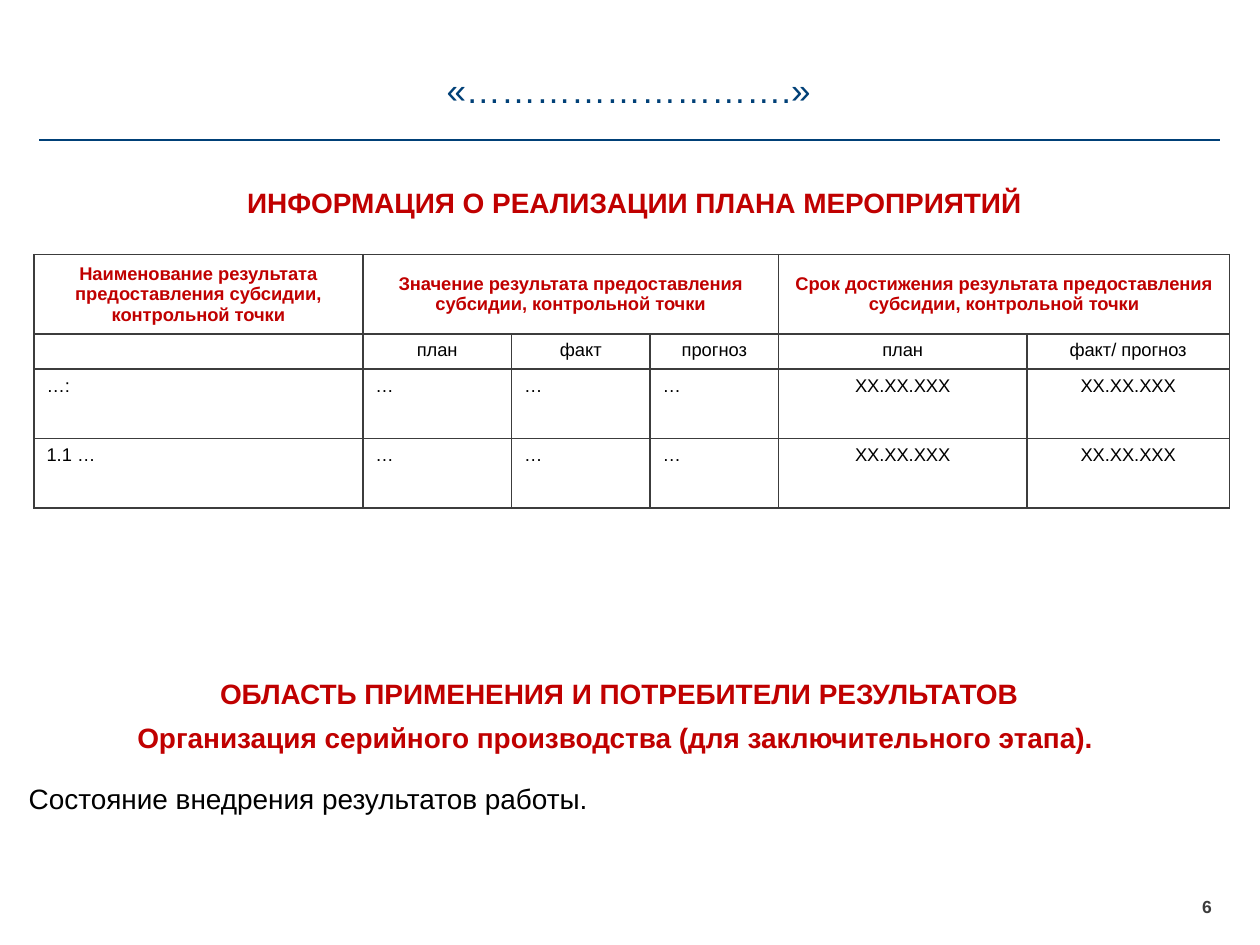
from lxml.etree import SubElement
from pptx import Presentation
from pptx.dml.color import RGBColor
from pptx.enum.shapes import MSO_CONNECTOR
from pptx.enum.text import MSO_ANCHOR as Anchor, PP_ALIGN as Align
from pptx.oxml.ns import qn
from pptx.util import Inches, Pt

COLORS = {"navy": "004077", "red": "C00000", "gray": "3C3C3C", "black": "000000"}
FONT = "Arial"

COLUMN_WIDTHS = [2.61, 1.18, 1.1, 1.02, 1.97, 1.61]
ROW_HEIGHTS = [0.63, 0.28, 0.55, 0.55]
# Heading, first column, last column
HEADINGS = [
    ("Наименование результата предоставления субсидии, контрольной точки", 0, 0),
    ("Значение результата предоставления субсидии, контрольной точки", 1, 3),
    ("Срок достижения результата предоставления субсидии, контрольной точки", 4, 5),
]
BODY_ROWS = [
    ["", "план", "факт", "прогноз", "план", "факт/ прогноз"],
    ["…:", "…", "…", "…", "XX.XX.XXX", "XX.XX.XXX"],
    ["1.1 …", "…", "…", "…", "XX.XX.XXX", "XX.XX.XXX"],
]


def color(name):
    return RGBColor.from_string(COLORS[name])


def format_paragraph(paragraph, size, color_name, bold=False, align=Align.LEFT):
    paragraph.alignment = align
    paragraph.font.name = FONT
    paragraph.font.size = Pt(size)
    paragraph.font.bold = bold
    paragraph.font.color.rgb = color(color_name)


def set_margins(frame, side, vertical):
    frame.margin_left = frame.margin_right = Inches(side)
    frame.margin_top = frame.margin_bottom = Inches(vertical)


def add_text(slide, box, lines, size, color_name, bold=False, align=Align.CENTER,
             side=0, vertical=0.05):
    frame = slide.shapes.add_textbox(*map(Inches, box)).text_frame
    frame.word_wrap = True
    set_margins(frame, side, vertical)
    frame.text = "\n".join(lines)
    for index, paragraph in enumerate(frame.paragraphs):
        format_paragraph(paragraph, size, color_name, bold, align)
        if index:
            paragraph.space_before = Pt(6)


def add_title(slide, box, text):
    title = slide.shapes.title
    title.left, title.top, title.width, title.height = map(Inches, box)
    frame = title.text_frame
    frame.text = text
    frame.vertical_anchor = Anchor.BOTTOM
    set_margins(frame, 0, 0)
    format_paragraph(frame.paragraphs[0], 20, "navy", align=Align.CENTER)


def add_rule(slide, left, right, y):
    rule = slide.shapes.add_connector(
        MSO_CONNECTOR.STRAIGHT, Inches(left), Inches(y), Inches(right), Inches(y))
    rule.line.color.rgb = color("navy")
    rule.line.width = Pt(1)
    SubElement(rule._element.spPr, qn("a:effectLst"))


def set_borders(cell):
    properties = cell._tc.get_or_add_tcPr()
    for side in ("a:lnL", "a:lnR", "a:lnT", "a:lnB"):
        line = SubElement(properties, qn(side), w=str(Pt(1)))
        fill = SubElement(line, qn("a:solidFill"))
        SubElement(fill, qn("a:srgbClr"), val=COLORS["gray"])


def fill_cell(cell, text, color_name="black", bold=False, align=Align.LEFT):
    cell.text = text
    paragraph = cell.text_frame.paragraphs[0]
    format_paragraph(paragraph, 10.5, color_name, bold, align)
    if not text:
        # Keeps the empty cell from growing to the default text size
        SubElement(paragraph._p, qn("a:endParaRPr"), sz="1050")


def add_results_table(slide, box):
    table = slide.shapes.add_table(
        len(ROW_HEIGHTS), len(COLUMN_WIDTHS), *map(Inches, box)).table
    table.first_row = table.horz_banding = False
    for column, width in zip(table.columns, COLUMN_WIDTHS):
        column.width = Inches(width)
    for row, height in zip(table.rows, ROW_HEIGHTS):
        row.height = Inches(height)
    for cell in table.iter_cells():
        set_borders(cell)
        cell.fill.background()

    # Heading row
    for text, first, last in HEADINGS:
        cell = table.cell(0, first)
        if last > first:
            cell.merge(table.cell(0, last))
        cell.vertical_anchor = Anchor.MIDDLE
        fill_cell(cell, text, "red", True, Align.CENTER)

    # Subheadings and dates are centred, other values start at the left
    for row, values in enumerate(BODY_ROWS, start=1):
        for column, text in enumerate(values):
            centered = row == 1 or column >= 4
            fill_cell(table.cell(row, column), text,
                      align=Align.CENTER if centered else Align.LEFT)


def main():
    presentation = Presentation()
    presentation.slide_width = Inches(10)
    presentation.slide_height = Inches(7.5)
    slide = presentation.slides.add_slide(presentation.slide_layouts[5])

    # Title and rule
    add_title(slide, (0.31, 0.21, 9.36, 0.67), "«……………………….»")
    add_rule(slide, 0.31, 9.68, 1.11)

    # Plan of measures
    add_text(slide, (0.35, 1.42, 9.37, 0.37),
             ["ИНФОРМАЦИЯ О РЕАЛИЗАЦИИ ПЛАНА МЕРОПРИЯТИЙ"], 16, "red", True)
    add_results_table(slide, (0.27, 2.02, 9.49, 2.01))

    # Use of the results
    add_text(slide, (0.23, 5.32, 9.37, 0.72),
             ["ОБЛАСТЬ ПРИМЕНЕНИЯ И ПОТРЕБИТЕЛИ РЕЗУЛЬТАТОВ",
              "Организация серийного производства (для заключительного этапа). "],
             16, "red", True)
    add_text(slide, (0.13, 6.15, 9.44, 0.37),
             ["Состояние внедрения результатов работы. "], 16, "black",
             align=Align.JUSTIFY, side=0.1)

    # Page number
    add_text(slide, (9.54, 7.11, 0.24, 0.18), ["6"], 10, "gray", True,
             align=Align.LEFT, vertical=0)

    presentation.save("out.pptx")


if __name__ == "__main__":
    main()
